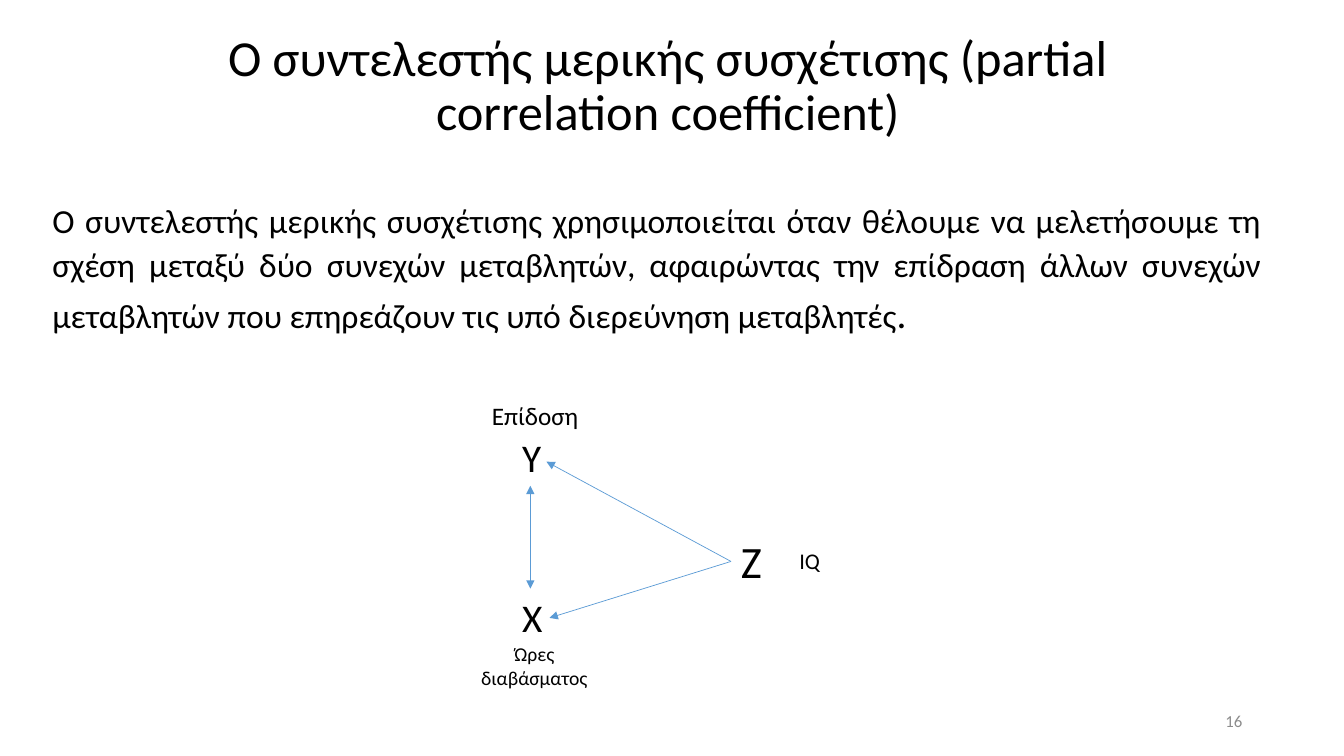
from lxml import etree
from pptx import Presentation
from pptx.dml.color import RGBColor
from pptx.enum.shapes import MSO_CONNECTOR
from pptx.enum.text import MSO_ANCHOR, MSO_AUTO_SIZE, PP_ALIGN
from pptx.oxml.ns import qn
from pptx.util import Inches, Pt

BLACK = RGBColor(0x00, 0x00, 0x00)
GREY = RGBColor(0x8C, 0x8C, 0x8C)
BLUE = RGBColor(0x5B, 0x9B, 0xD5)
FONT = "Calibri"
STRAIGHT = MSO_CONNECTOR.STRAIGHT
MIDDLE, TOP = MSO_ANCHOR.MIDDLE, MSO_ANCHOR.TOP
GROW, FIXED = MSO_AUTO_SIZE.SHAPE_TO_FIT_TEXT, MSO_AUTO_SIZE.NONE
LEFT, CENTER, RIGHT, JUSTIFY = (
    PP_ALIGN.LEFT, PP_ALIGN.CENTER, PP_ALIGN.RIGHT, PP_ALIGN.JUSTIFY)
SIDE_TOP, SIDE_LEFT, SIDE_BOTTOM = 0, 1, 2

TITLE = "Ο συντελεστής μερικής συσχέτισης (partial correlation coefficient)"
DEFINITION = (
    "Ο συντελεστής μερικής συσχέτισης χρησιμοποιείται όταν θέλουμε να "
    "μελετήσουμε τη σχέση μεταξύ δύο συνεχών μεταβλητών, αφαιρώντας την "
    "επίδραση άλλων συνεχών μεταβλητών που επηρεάζουν τις υπό διερεύνηση "
    "μεταβλητές")


def add_text(slide, box, runs, align=LEFT, anchor=TOP, fit=FIXED,
             color=BLACK, spacing=None):
    holder = slide.shapes.add_textbox(*(Inches(v) for v in box))
    frame = holder.text_frame
    frame.word_wrap = True
    frame.auto_size = fit
    frame.vertical_anchor = anchor
    paragraph = frame.paragraphs[0]
    for key, value in {"alignment": align, **(spacing or {})}.items():
        setattr(paragraph, key, value)
    for text, size in runs:
        run = paragraph.add_run()
        run.text = text
        for key, value in {"name": FONT, "size": Pt(size)}.items():
            setattr(run.font, key, value)
        run.font.color.rgb = color
    return holder


def add_arrow(slide, start, end):
    arrow = slide.shapes.add_connector(
        STRAIGHT, *(Inches(v) for v in (*start, *end)))
    arrow.line.color.rgb = BLUE
    arrow.line.width = Pt(0.5)
    outline = arrow.line._get_or_add_ln()
    etree.SubElement(outline, qn("a:tailEnd"), type="triangle")
    etree.SubElement(arrow._element.spPr, qn("a:effectLst"))
    return arrow


def add_title(slide, box):
    add_text(slide, box, [(TITLE, 36)], CENTER, MIDDLE,
             spacing={"line_spacing": 0.9})


def add_definition(slide, box):
    add_text(slide, box, [(DEFINITION, 24), (".", 28)], JUSTIFY,
             spacing={"line_spacing": 1.1, "space_after": Pt(3)})


def add_page_number(slide, box):
    add_text(slide, box, [("16", 12)], RIGHT, MIDDLE, color=GREY)


def add_variable_diagram(slide, box):
    left, top = box[:2]

    def add_label(text, size, x, y, width, height, align=LEFT):
        return add_text(slide, (left + x, top + y, width, height),
                        [(text, size)], align, fit=GROW)

    outcome = add_label("Υ", 28, 0.53, 0.33, 0.36, 0.57)
    predictor = add_label("Χ", 28, 0.53, 1.92, 0.36, 0.57)
    control = add_label("Ζ", 32, 2.7, 1.33, 0.25, 0.64)

    axis = left + 0.71
    downward = add_arrow(slide, (axis, top + 0.95), (axis, top + 1.92))
    downward.end_connect(predictor, SIDE_TOP)
    upward = add_arrow(slide, (axis, top + 1.76), (axis, top + 0.9))
    upward.end_connect(outcome, SIDE_BOTTOM)
    for x, y in ((0.87, 0.66), (0.9, 2.21)):
        influence = add_arrow(slide, (left + 2.7, top + 1.65),
                              (left + x, top + y))
        influence.begin_connect(control, SIDE_LEFT)

    add_label("Επίδοση", 18, 0.23, 0, 1.5, 0.4)
    add_label("Ώρες διαβάσματος", 14, 0, 2.4, 1.5, 0.57, CENTER)
    add_label("ΙQ", 16, 3.28, 1.46, 1.5, 0.37)


def main():
    deck = Presentation()
    deck.slide_width, deck.slide_height = Inches(13.33), Inches(7.5)
    slide = deck.slides.add_slide(deck.slide_layouts[6])
    add_title(slide, (1.02, 0.3, 11.21, 1.13))
    add_definition(slide, (0.42, 1.89, 12.19, 1.61))
    add_page_number(slide, (9.42, 6.95, 3, 0.4))
    add_variable_diagram(slide, (4.55, 3.92, 4.78, 2.97))
    deck.save("out.pptx")


if __name__ == "__main__":
    main()
